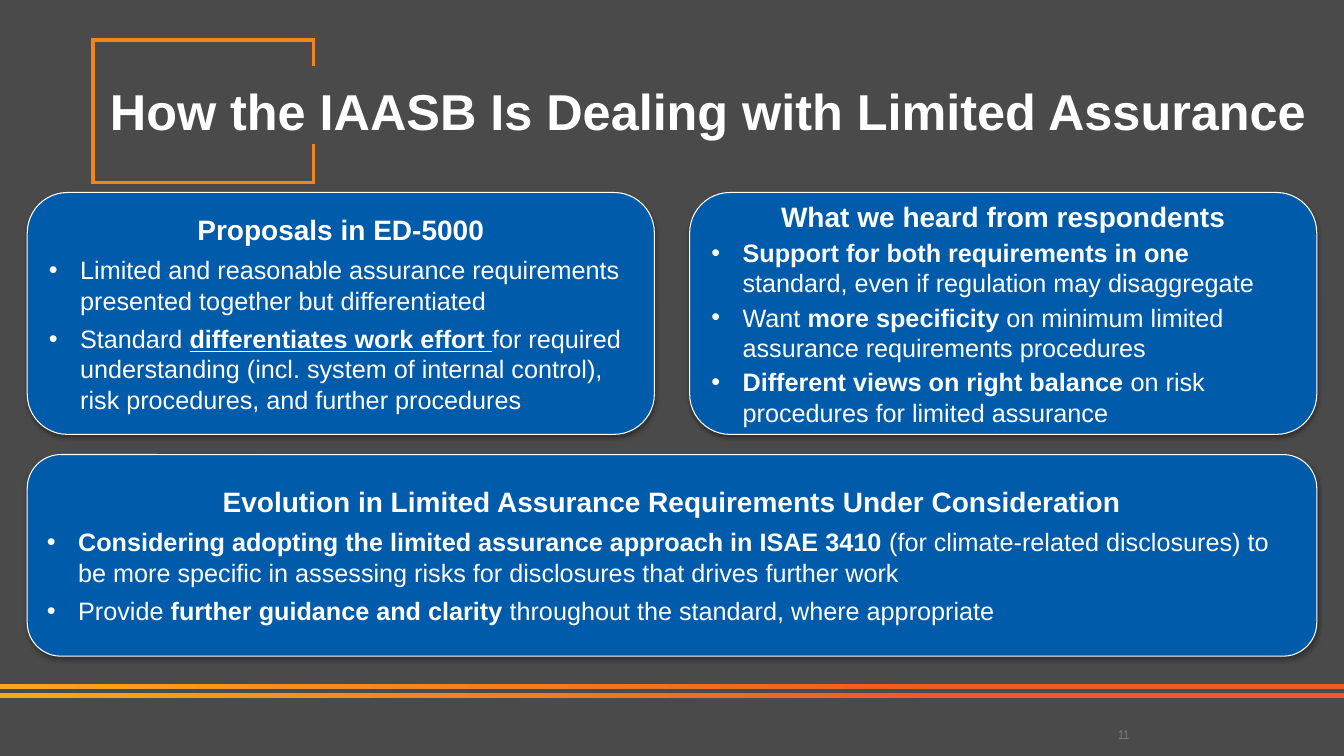
from lxml.etree import SubElement
from pptx import Presentation
from pptx.dml.color import RGBColor as Rgb
from pptx.enum.shapes import MSO_SHAPE as Shape
from pptx.enum.text import MSO_ANCHOR as Anchor, PP_ALIGN as Align
from pptx.oxml.ns import qn
from pptx.util import Inches, Pt

TITLE = "How the IAASB Is Dealing with Limited Assurance"
PAGE_NUMBER = "11"
PLAIN, BOLD, UNDERLINED = {}, {"bold": True}, {"bold": True, "underline": True}
PANELS = [
    {
        "at": (0.27, 1.91, 6.22, 2.4), "gap": 6,
        "heading": "Proposals in ED-5000",
        "points": [
            [("Limited and reasonable assurance requirements presented together but differentiated", PLAIN)],
            [("Standard ", PLAIN), ("differentiates work effort ", UNDERLINED),
             ("for required understanding (incl. system of internal control), "
              "risk procedures, and further procedures", PLAIN)],
        ],
    },
    {
        "at": (6.84, 1.91, 6.22, 2.4), "gap": 3,
        "heading": "What we heard from respondents",
        "points": [
            [("Support for both requirements in one ", BOLD),
             ("standard, even if regulation may disaggregate", PLAIN)],
            [("Want ", PLAIN), ("more specificity", BOLD),
             (" on minimum limited assurance requirements procedures", PLAIN)],
            [("Different views on right balance ", BOLD),
             ("on risk procedures for limited assurance", PLAIN)],
        ],
    },
    {
        "at": (0.27, 4.51, 12.79, 2), "gap": 6,
        "heading": "Evolution in Limited Assurance Requirements Under Consideration",
        "points": [
            [("Considering adopting the limited assurance approach in ISAE 3410 ", BOLD),
             ("(for climate-related disclosures) to be more specific in assessing "
              "risks for disclosures that drives further work", PLAIN)],
            [("Provide ", PLAIN), ("further guidance and clarity ", BOLD),
             ("throughout the standard, where appropriate", PLAIN)],
        ],
    },
]
FRAME = {"at": (0.92, 0.4, 2.19, 1.41), "rows": [(0.25, "LRT"), (0.78, "L"), (0.38, "LRB")]}
STRIPES = [(0, 6.79, 13.33, 0.05), (0, 6.87, 13.33, 0.05)]
THEME = {
    "background": "4A4A4A", "panel": "005BAA", "white": "FFFFFF", "frame": "F08714",
    "number": "808080", "stripe": [(0, "FAA61A"), (0.7, "F15A22")],
    "font": "Arial", "number_font": "Arial Narrow",
    "title_size": 36, "heading_size": 20, "point_size": 18, "number_size": 9,
}


def color(name):
    return Rgb.from_string(THEME[name])


def inches(values):
    return [Inches(value) for value in values]


def add_span(para, text, size, font="font", fill="white", **style):
    span = para.add_run()
    span.text = text
    look = {"name": THEME[font], "size": Pt(THEME[size]), **style}
    for name, value in look.items():
        setattr(span.font, name, value)
    span.font.color.rgb = color(fill)


def add_label(page, at, text, align, size, **style):
    frame = page.shapes.add_textbox(*inches(at)).text_frame
    layout = {"word_wrap": True, "vertical_anchor": Anchor.MIDDLE, "margin_left": 0,
              "margin_right": 0, "margin_top": 0, "margin_bottom": 0}
    for name, value in layout.items():
        setattr(frame, name, value)
    para = frame.paragraphs[0]
    para.alignment = align
    add_span(para, text, size, **style)


def add_stripe(page, at):
    stripe = page.shapes.add_shape(Shape.RECTANGLE, *inches(at))
    stripe.shadow.inherit = False
    stripe.line.fill.background()
    stripe.fill.gradient()
    stripe.fill.gradient_angle = 0
    for stop, (position, value) in zip(stripe.fill.gradient_stops, THEME["stripe"]):
        stop.position = position
        stop.color.rgb = Rgb.from_string(value)


def add_frame(page):
    rows = FRAME["rows"]
    table = page.shapes.add_table(len(rows), 1, *inches(FRAME["at"])).table
    for row, cell, (height, sides) in zip(table.rows, table.iter_cells(), rows):
        row.height = Inches(height)
        cell.margin_top = cell.margin_bottom = 0
        cell.text_frame.paragraphs[0].font.size = Pt(THEME["number_size"])
        properties = cell._tc.get_or_add_tcPr()
        for side in "LRTB":
            border = SubElement(properties, qn(f"a:ln{side}"), w=str(Pt(3)))
            if side in sides:
                fill = SubElement(border, qn("a:solidFill"))
                SubElement(fill, qn("a:srgbClr"), val=THEME["frame"])
            else:
                SubElement(border, qn("a:noFill"))
        cell.fill.background()


def add_shadow(shape):
    shape.shadow.inherit = False
    effects = shape._element.spPr.find(qn("a:effectLst"))
    shadow = SubElement(effects, qn("a:outerShdw"), blurRad=str(Pt(3.1)), dist=str(Pt(1.8)),
                        dir="5400000", rotWithShape="0")
    tint = SubElement(shadow, qn("a:srgbClr"), val="000000")
    SubElement(tint, qn("a:alpha"), val="35000")


def add_panel(page, panel):
    box = page.shapes.add_shape(Shape.ROUNDED_RECTANGLE, *inches(panel["at"]))
    box.fill.solid()
    box.fill.fore_color.rgb = color("panel")
    box.line.color.rgb = color("white")
    box.line.width = Pt(0.75)
    add_shadow(box)
    frame = box.text_frame
    frame.word_wrap = True
    frame.vertical_anchor = Anchor.MIDDLE
    heading = frame.paragraphs[0]
    heading.alignment = Align.CENTER
    add_span(heading, panel["heading"], "heading_size", bold=True)
    for point in panel["points"]:
        para = frame.add_paragraph()
        para.alignment = Align.LEFT
        para.space_before = Pt(panel["gap"])
        properties = para._p.get_or_add_pPr()
        properties.set("marL", str(Inches(0.31)))
        properties.set("indent", str(-Inches(0.31)))
        SubElement(properties, qn("a:buFont"), typeface=THEME["font"])
        SubElement(properties, qn("a:buChar"), char="•")
        for text, style in point:
            add_span(para, text, "point_size", **style)


def main():
    deck = Presentation()
    deck.slide_width, deck.slide_height = inches((13.33, 7.5))
    page = deck.slides.add_slide(deck.slide_layouts[6])
    page.background.fill.solid()
    page.background.fill.fore_color.rgb = color("background")
    for at in STRIPES:
        add_stripe(page, at)
    add_frame(page)
    add_label(page, (9.63, 7.12, 3.03, 0.33), PAGE_NUMBER, Align.CENTER, "number_size",
              font="number_font", fill="number")
    add_label(page, (1.09, 0.37, 12.2, 1.45), TITLE, Align.LEFT, "title_size", bold=True)
    for panel in PANELS:
        add_panel(page, panel)
    deck.save("out.pptx")


if __name__ == "__main__":
    main()
